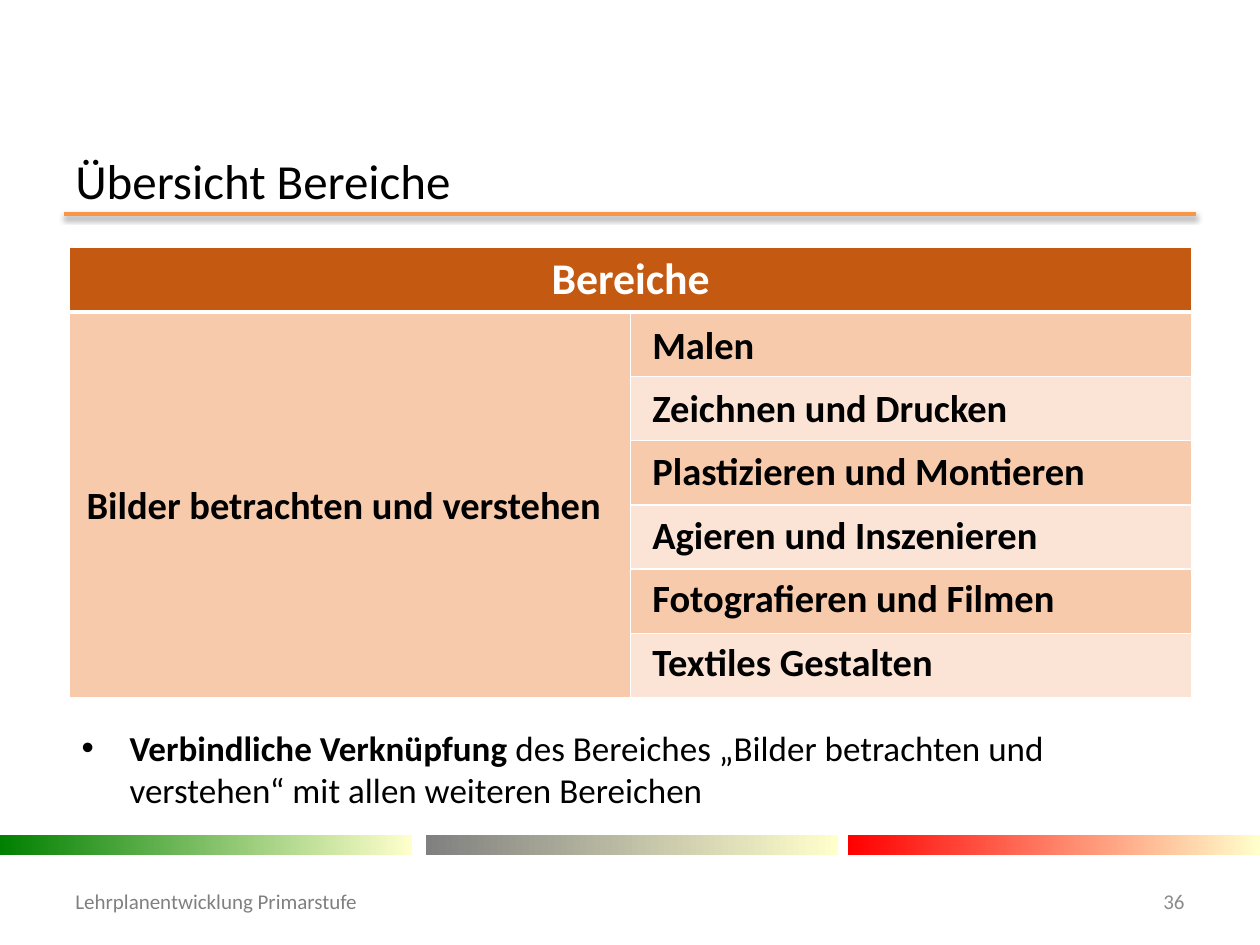
from dataclasses import dataclass

from lxml import etree
from pptx import Presentation
from pptx.dml.color import RGBColor
from pptx.enum.shapes import MSO_CONNECTOR, MSO_SHAPE
from pptx.enum.text import MSO_ANCHOR, PP_ALIGN
from pptx.oxml.ns import qn
from pptx.util import Emu, Inches, Pt

RECTANGLE, STRAIGHT = MSO_SHAPE.RECTANGLE, MSO_CONNECTOR.STRAIGHT
TOP, MIDDLE = MSO_ANCHOR.TOP, MSO_ANCHOR.MIDDLE
LEFT, CENTER, RIGHT = PP_ALIGN.LEFT, PP_ALIGN.CENTER, PP_ALIGN.RIGHT
WIDTH, HEIGHT = Inches(10), Inches(7.5)


@dataclass(frozen=True)
class Theme:
    """Colours, font and type sizes of the slide."""
    font: str = "Calibri"
    ink: str = "000000"
    paper: str = "FFFFFF"
    footer: str = "808080"
    number: str = "8C8C8C"
    rule: str = "F79646"
    header: str = "C45911"
    bands: tuple[str, str] = ("F7CAAC", "FBE4D5")
    bar_end: str = "FFFFCC"
    title_size: float = 28
    header_size: float = 25
    area_size: float = 22
    body_size: float = 20
    footer_size: float = 12


@dataclass(frozen=True)
class Box:
    """A rectangle in percent of the slide's width and height."""
    left: float
    top: float
    width: float
    height: float

    def place(self) -> tuple[Emu, Emu, Emu, Emu]:
        """Return the rectangle as lengths."""
        return across(self.left), down(self.top), across(self.width), down(self.height)


@dataclass(frozen=True)
class Bar:
    """A fading bar above the footer."""
    left: float
    color: str


THEME = Theme()
BARS = (Bar(0, "008000"), Bar(33.8, "808080"), Bar(67.3, "FF0000"))
AREAS = ("Malen", "Zeichnen und Drucken", "Plastizieren und Montieren",
         "Agieren und Inszenieren", "Fotografieren und Filmen", "Textiles Gestalten")


def across(percent: float) -> Emu:
    """Turn a percentage of the slide's width into a length."""
    return Emu(round(WIDTH * percent / 100))


def down(percent: float) -> Emu:
    """Turn a percentage of the slide's height into a length."""
    return Emu(round(HEIGHT * percent / 100))


def rgb(color: str) -> RGBColor:
    """Turn a hexadecimal string into a colour."""
    return RGBColor.from_string(color)


def add_element(parent, tag: str, **attributes):
    """Append an XML element with attributes to its parent."""
    return etree.SubElement(parent, qn(tag), attributes)


def add_bullet(paragraph, indent: float) -> None:
    """Give a paragraph a round bullet with a hanging indent."""
    properties = paragraph._p.get_or_add_pPr()
    properties.set("marL", str(Inches(indent)))
    properties.set("indent", str(-Inches(indent)))
    add_element(properties, "a:buFont", typeface="Arial")
    add_element(properties, "a:buChar", char="•")


def write(frame, *texts: str, size: float, color: str = THEME.ink, bold: bool = False,
          lead: str = "", align: PP_ALIGN = LEFT, line_spacing: float = 1,
          gap: float = 0, bullet_indent: float = 0) -> None:
    """Write paragraphs into a text frame, each after an optional bold lead."""
    for index, text in enumerate(texts):
        paragraph = frame.add_paragraph() if index else frame.paragraphs[0]
        paragraph.alignment = align
        paragraph.line_spacing = line_spacing
        if index:
            paragraph.space_before = Pt(gap)
        if bullet_indent:
            add_bullet(paragraph, bullet_indent)
        for content, weight in ((lead, True), (text, bold)):
            if content:
                run = paragraph.add_run()
                run.text = content
                run.font.name = THEME.font
                run.font.size = Pt(size)
                run.font.bold = weight
                run.font.color.rgb = rgb(color)


def add_text(slide, box: Box, *texts: str, anchor: MSO_ANCHOR = TOP,
             fill: str = "", **text_format) -> None:
    """Add a wrapping text box with formatted paragraphs."""
    shape = slide.shapes.add_textbox(*box.place())
    shape.text_frame.word_wrap = True
    shape.text_frame.vertical_anchor = anchor
    if fill:
        shape.fill.solid()
        shape.fill.fore_color.rgb = rgb(fill)
    write(shape.text_frame, *texts, **text_format)


def add_rule(slide, left: float, right: float, top: float) -> None:
    """Add the line below the title with its soft shadow."""
    rule = slide.shapes.add_connector(
        STRAIGHT, across(left), down(top), across(right), down(top))
    rule.line.color.rgb = rgb(THEME.rule)
    rule.line.width = Pt(2)
    effects = add_element(rule._element.spPr, "a:effectLst")
    shadow = add_element(effects, "a:outerShdw", blurRad="40000", dist="20000",
                         dir="5400000", rotWithShape="0")
    color = add_element(shadow, "a:srgbClr", val=THEME.ink)
    add_element(color, "a:alpha", val="38000")


def add_bar(slide, bar: Bar) -> None:
    """Add a bar that fades from its colour to the common end colour."""
    shape = slide.shapes.add_shape(RECTANGLE, *Box(bar.left, 88.4, 32.7, 2.13).place())
    shape.shadow.inherit = False
    shape.line.fill.background()
    shape.fill.gradient()
    shape.fill.gradient_angle = 0
    for stop, color in zip(shape.fill.gradient_stops, (bar.color, THEME.bar_end)):
        stop.color.rgb = rgb(color)


def style_cell(cell, fill: str, bottom: float = 1, top: float = 1) -> None:
    """Give a cell its fill and borders."""
    properties = cell._tc.get_or_add_tcPr()
    for side, width in (("L", 1), ("R", 1), ("T", top), ("B", bottom)):
        border = add_element(properties, f"a:ln{side}", w=str(Pt(width)))
        add_element(add_element(border, "a:solidFill"), "a:srgbClr", val=THEME.paper)
    cell.fill.solid()
    cell.fill.fore_color.rgb = rgb(fill)


def add_area_table(slide, box: Box, header_height: float) -> None:
    """Add the table with a header, one tall cell and a band for each area."""
    count = len(AREAS)
    table = slide.shapes.add_table(count + 1, 2, *box.place()).table
    table.first_row = table.horz_banding = False
    row_height = (box.height - header_height) / count
    for index, row in enumerate(table.rows):
        row.height = down(row_height if index else header_height)
        for column, cell in enumerate(row.cells):
            if index:
                band = THEME.bands[(index - 1) % 2 if column else 0]
                style_cell(cell, band, top=3 if index == 1 else 1)
            else:
                style_cell(cell, THEME.header, bottom=3)
    header = table.cell(0, 0)
    header.merge(table.cell(0, 1))
    table.cell(1, 0).merge(table.cell(count, 0))
    header.vertical_anchor = MIDDLE
    write(header.text_frame, "Bereiche", size=THEME.header_size, color=THEME.paper,
          bold=True, align=CENTER)


def main() -> None:
    """Build the slide and save it."""
    presentation = Presentation()
    presentation.slide_width, presentation.slide_height = WIDTH, HEIGHT
    slide = presentation.slides.add_slide(presentation.slide_layouts[6])
    add_rule(slide, 5.1, 94.9, 22.67)
    for bar in BARS:
        add_bar(slide, bar)
    add_text(slide, Box(5, 16.4, 90, 5.2), "Übersicht Bereiche",
             anchor=MIDDLE, size=THEME.title_size)
    add_text(slide, Box(5, 92.67, 30.8, 5.33), "Lehrplanentwicklung Primarstufe",
             anchor=MIDDLE, size=THEME.footer_size, color=THEME.footer)
    add_text(slide, Box(88.6, 92.67, 6.4, 5.33), "36", anchor=MIDDLE, align=RIGHT,
             size=THEME.footer_size, color=THEME.number)
    add_text(slide, Box(5.5, 76.27, 90.5, 10.53),
             "des Bereiches „Bilder betrachten und verstehen“ mit allen weiteren Bereichen",
             lead="Verbindliche Verknüpfung ", size=THEME.body_size, fill=THEME.paper,
             bullet_indent=0.38)
    add_area_table(slide, Box(5.5, 26.13, 89.1, 47.07), 6.27)
    area_format = {"size": THEME.area_size, "bold": True, "line_spacing": 1.07, "gap": 8}
    add_text(slide, Box(50.8, 32.93, 43.3, 44.53), *AREAS, **area_format)
    add_text(slide, Box(5.9, 49.87, 43.3, 6.67), "Bilder betrachten und verstehen",
             **area_format)
    presentation.save("out.pptx")


if __name__ == "__main__":
    main()
